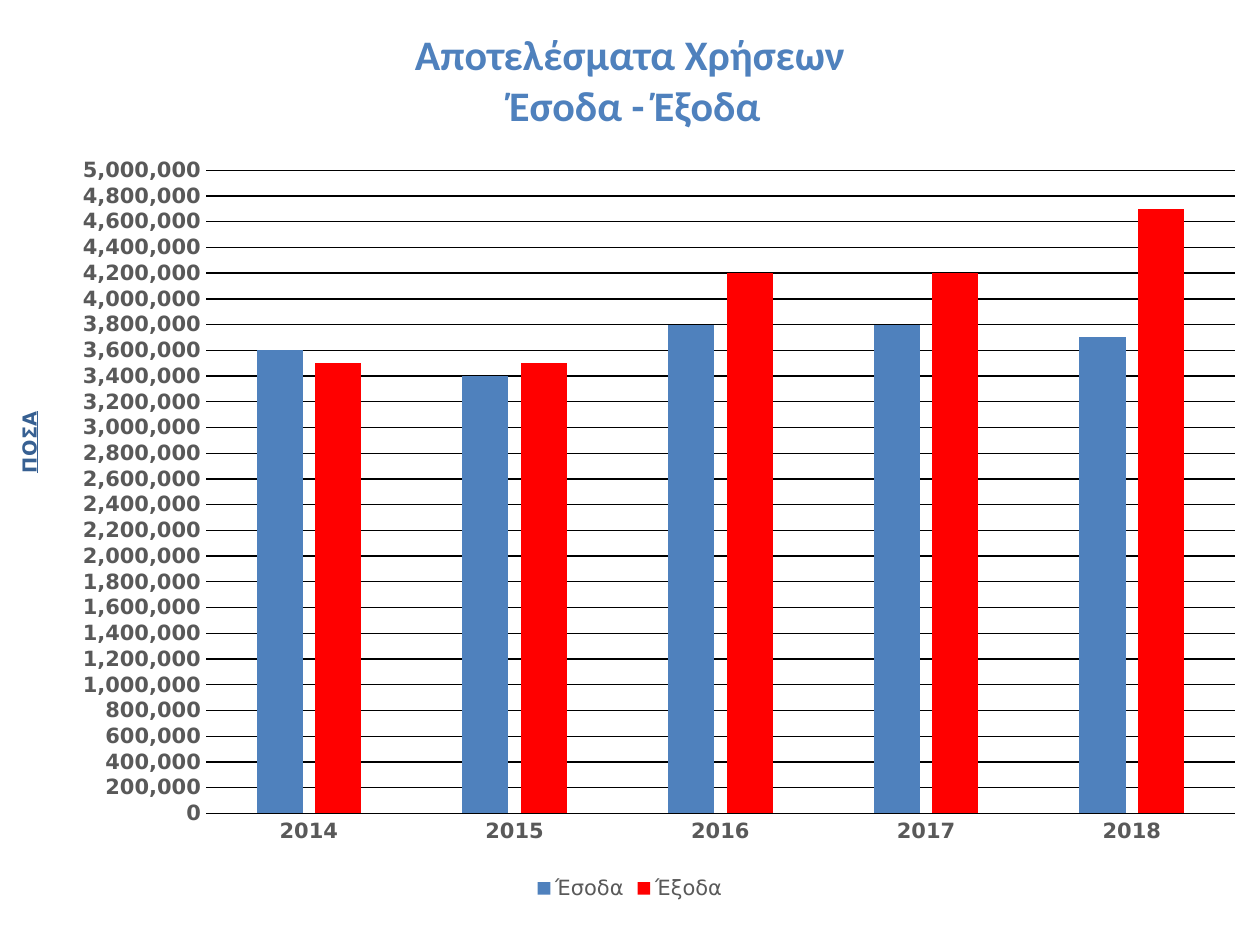
from pptx import Presentation
from pptx.chart.data import CategoryChartData as ChartData
from pptx.dml.color import RGBColor
from pptx.enum.chart import XL_CHART_TYPE as ChartType
from pptx.enum.chart import XL_LEGEND_POSITION as LegendPosition
from pptx.enum.chart import XL_TICK_MARK as TickMark
from pptx.oxml import parse_xml
from pptx.oxml.ns import nsdecls
from pptx.util import Inches, Pt

BLUE = RGBColor(0x4F, 0x81, 0xBD)
DARK_BLUE = RGBColor(0x37, 0x60, 0x92)
RED = RGBColor(0xFF, 0x00, 0x00)
GRAY = RGBColor(0x59, 0x59, 0x59)
BLACK = RGBColor(0x00, 0x00, 0x00)

YEARS = ["2014", "2015", "2016", "2017", "2018"]
SERIES = {
    "Έσοδα": (BLUE, [3600000, 3400000, 3800000, 3800000, 3700000]),
    "Έξοδα": (RED, [3500000, 3500000, 4200000, 4200000, 4700000]),
}


def format_font(font, color, **values):
    font.color.rgb = color
    for name, value in values.items():
        setattr(font, name, value)


def place(element, index, target="", **shares):
    """Fix a chart part at shares of the chart's size."""
    for layout in element.xpath("./c:layout"):
        element.remove(layout)
    values = "".join(f'<c:{key} val="{share}"/>' for key, share in shares.items())
    element.insert(index, parse_xml(
        f'<c:layout {nsdecls("c")}><c:manualLayout>{target}<c:xMode val="edge"/>'
        f'<c:yMode val="edge"/>{values}</c:manualLayout></c:layout>'
    ))


presentation = Presentation()
presentation.slide_width, presentation.slide_height = Inches(10), Inches(7.5)
slide = presentation.slides.add_slide(presentation.slide_layouts[6])

# Income and expenses chart
data = ChartData(number_format="#,##0")
data.categories = YEARS
for name, (color, amounts) in SERIES.items():
    data.add_series(name, amounts)
chart = slide.shapes.add_chart(
    ChartType.COLUMN_CLUSTERED, 0, 0, presentation.slide_width, Inches(7.19), data
).chart
format_font(chart.font, BLACK, name="Calibri", size=Pt(10))

# Columns
plot = chart.plots[0]
plot.vary_by_categories = False
plot.gap_width, plot.overlap = 219, -27
for series in plot.series:
    series.format.fill.solid()
    series.format.fill.fore_color.rgb = SERIES[series.name][0]

# Two-line title
title = chart.chart_title.text_frame
title.text = "Αποτελέσματα Χρήσεων\n Έσοδα - Έξοδα"
for paragraph in title.paragraphs:
    format_font(paragraph.runs[0].font, BLUE, name="Calibri", size=Pt(24), bold=True)

# Axes
category_axis, value_axis = chart.category_axis, chart.value_axis
for axis in (category_axis, value_axis):
    axis.major_tick_mark = axis.minor_tick_mark = TickMark.NONE
    format_font(axis.tick_labels.font, GRAY, name="DejaVu Sans", size=Pt(12), bold=True)
for line in (category_axis.format.line, value_axis.major_gridlines.format.line):
    line.color.rgb = BLACK
    line.width = Pt(0.75)
value_axis.format.line.fill.background()
scale = {"minimum_scale": 0, "maximum_scale": 5000000, "major_unit": 200000}
for name, value in scale.items():
    setattr(value_axis, name, value)
value_axis.tick_labels.number_format = "#,##0"
value_axis.tick_labels.number_format_is_linked = False

# Value axis title, reading upwards
axis_title = value_axis.axis_title.text_frame
axis_title.text = "ΠΟΣΑ"
format_font(axis_title.paragraphs[0].runs[0].font, DARK_BLUE,
            name="DejaVu Sans", size=Pt(11), bold=True, underline=True)
title_element = chart.element.xpath(".//c:valAx/c:title")[0]
body = title_element.xpath(".//a:bodyPr")[0]
body.set("rot", "-5400000")
body.set("vert", "horz")
place(title_element, 1, x=0.01, y=0.45)

# Legend
chart.has_legend = True
chart.legend.position = LegendPosition.BOTTOM
chart.legend.include_in_layout = False
format_font(chart.legend.font, GRAY, name="DejaVu Sans", size=Pt(12), bold=False)

# Plot area
place(chart.element.xpath(".//c:plotArea")[0], 0, '<c:layoutTarget val="inner"/>',
      x=0.1635, y=0.188, w=0.8165, h=0.71)

presentation.save("out.pptx")
